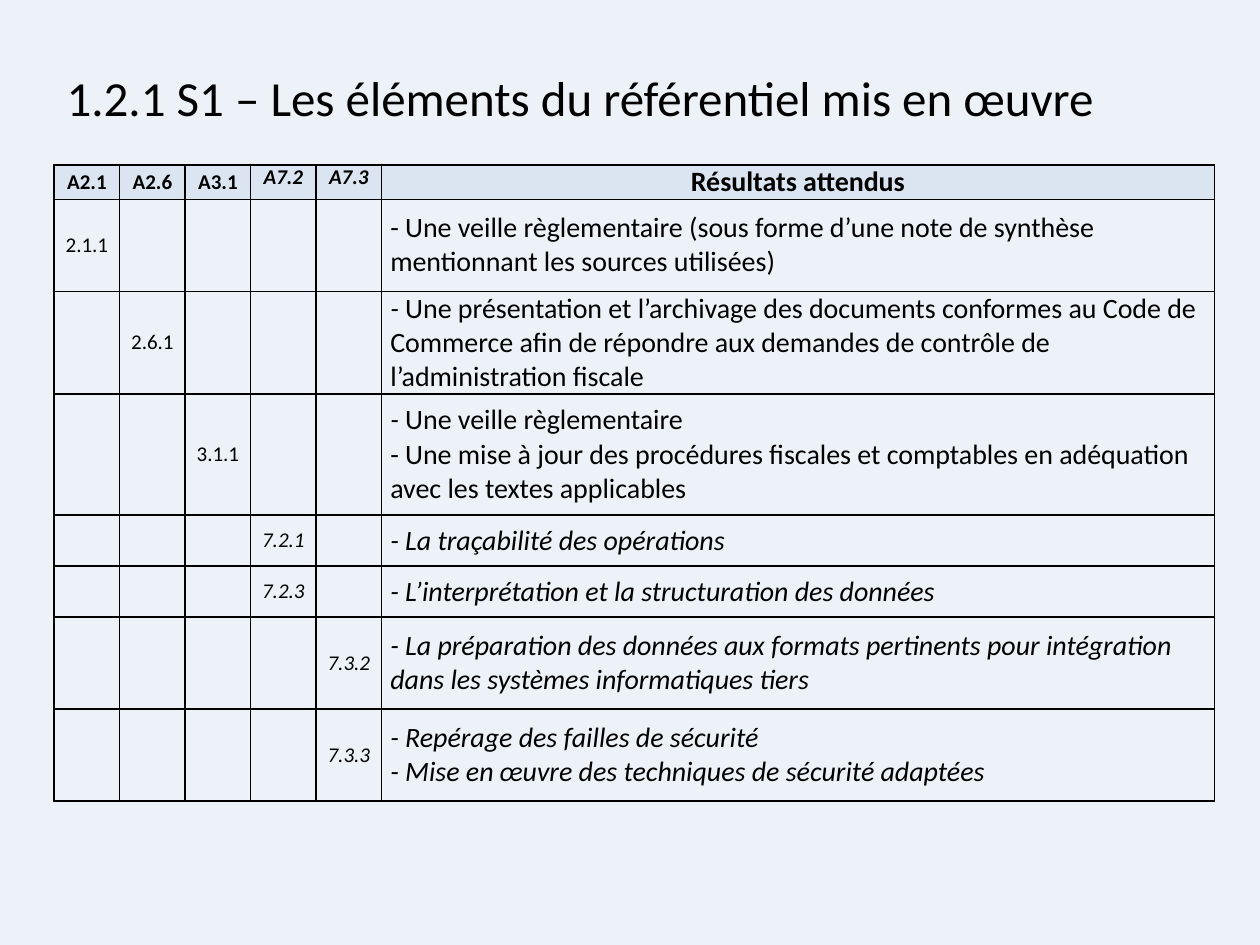
from lxml import etree
from pptx import Presentation
from pptx.dml.color import RGBColor
from pptx.enum.text import MSO_ANCHOR as Anchor, PP_ALIGN as Align
from pptx.oxml.ns import qn
from pptx.util import Inches, Pt

CODE_WIDTH = 0.52
RESULT_WIDTH = 6.61
ROW_HEIGHTS = [0.16, 0.73, 0.73, 0.96, 0.4, 0.4, 0.73, 0.73]
ACTIVITIES = ["A2.1", "A2.6", "A3.1", "A7.2", "A7.3"]
FIRST_ITALIC_COLUMN = 3
RESULT_COLUMN = len(ACTIVITIES)

# Column of the code, code, paragraphs made of (text, italic) runs
RESULTS = [
    (0, "2.1.1", [[("- Une veille règlementaire (sous forme d’une note de synthèse "
                    "mentionnant les sources utilisées)", False)]]),
    (1, "2.6.1", [[("- ", True),
                   ("Une présentation et l’archivage des documents conformes au Code de "
                    "Commerce afin de répondre aux demandes de contrôle de "
                    "l’administration fiscale", False)]]),
    (2, "3.1.1", [[("- ", True), ("Une veille règlementaire", False)],
                  [("- Une mise à jour des procédures fiscales et comptables en adéquation "
                    "avec les textes applicables", False)]]),
    (3, "7.2.1", [[("- La traçabilité des opérations", True)]]),
    (3, "7.2.3", [[("- L’interprétation et la structuration des données", True)]]),
    (4, "7.3.2", [[("- La préparation des données aux formats pertinents pour intégration "
                    "dans les systèmes informatiques tiers", True)]]),
    (4, "7.3.3", [[("- Repérage des failles de sécurité", True)],
                  [("- Mise en œuvre des techniques de sécurité adaptées", True)]]),
]


def color(value):
    return RGBColor.from_string(value)


class SlideBuilder:
    font = "Calibri"
    ink = "000000"
    background = "EDF2F8"
    header_fill = "DBE5F1"

    def __init__(self, presentation):
        self.slide = presentation.slides.add_slide(presentation.slide_layouts[6])
        fill = self.slide.background.fill
        fill.solid()
        fill.fore_color.rgb = color(self.background)

    def style(self, font, size, bold=False, italic=False):
        font.name = self.font
        font.size = Pt(size)
        font.bold = bold
        font.italic = italic
        font.color.rgb = color(self.ink)

    def title(self, text, left, top, width, height):
        box = self.slide.shapes.add_textbox(
            Inches(left), Inches(top), Inches(width), Inches(height))
        frame = box.text_frame
        frame.word_wrap = True
        frame.vertical_anchor = Anchor.MIDDLE
        frame.text = text
        self.style(frame.paragraphs[0].runs[0].font, 28)

    def table(self, left, top, widths, heights):
        shape = self.slide.shapes.add_table(
            len(heights), len(widths), Inches(left), Inches(top),
            Inches(sum(widths)), Inches(sum(heights)))
        table = shape.table
        table.first_row = table.horz_banding = False
        for column, width in zip(table.columns, widths):
            column.width = Inches(width)
        for row, height in zip(table.rows, heights):
            row.height = Inches(height)
        for cell in table.iter_cells():
            self.borders(cell)
            cell.fill.background()
        return table

    def borders(self, cell):
        properties = cell._tc.get_or_add_tcPr()
        for side in ("lnL", "lnR", "lnT", "lnB"):
            line = etree.SubElement(properties, qn(f"a:{side}"), w=str(Pt(1)))
            fill = etree.SubElement(line, qn("a:solidFill"))
            etree.SubElement(fill, qn("a:srgbClr"), val=self.ink)

    def cell_text(self, cell, paragraphs, size, align=Align.LEFT, anchor=Anchor.MIDDLE,
                  bold=False):
        """Fill a cell with paragraphs, each a list of (text, italic) runs."""
        cell.margin_left = cell.margin_right = Inches(0.07)
        cell.margin_top = cell.margin_bottom = 0
        cell.vertical_anchor = anchor
        frame = cell.text_frame
        for index, runs in enumerate(paragraphs):
            paragraph = frame.add_paragraph() if index else frame.paragraphs[0]
            paragraph.alignment = align
            for text, italic in runs:
                run = paragraph.add_run()
                run.text = text
                self.style(run.font, size, bold, italic)

    def header(self, cell, text, size, italic=False):
        self.cell_text(cell, [[(text, italic)]], size, Align.CENTER,
                       Anchor.TOP if italic else Anchor.MIDDLE, bold=True)
        cell.fill.solid()
        cell.fill.fore_color.rgb = color(self.header_fill)


def main():
    presentation = Presentation()
    presentation.slide_width = Inches(10)
    presentation.slide_height = Inches(7.5)
    builder = SlideBuilder(presentation)

    widths = [CODE_WIDTH] * len(ACTIVITIES) + [RESULT_WIDTH]
    table = builder.table(0.43, 1.31, widths, ROW_HEIGHTS)
    for column, activity in enumerate(ACTIVITIES):
        builder.header(table.cell(0, column), activity, 12, column >= FIRST_ITALIC_COLUMN)
    builder.header(table.cell(0, RESULT_COLUMN), "Résultats attendus", 16)

    for row, (column, code, paragraphs) in enumerate(RESULTS, start=1):
        builder.cell_text(table.cell(row, column), [[(code, column >= FIRST_ITALIC_COLUMN)]],
                          12, Align.CENTER)
        builder.cell_text(table.cell(row, RESULT_COLUMN), paragraphs, 16)

    builder.title("1.2.1 S1 – Les éléments du référentiel mis en œuvre", 0.43, 0.29, 9.21, 0.96)
    presentation.save("out.pptx")


if __name__ == "__main__":
    main()
